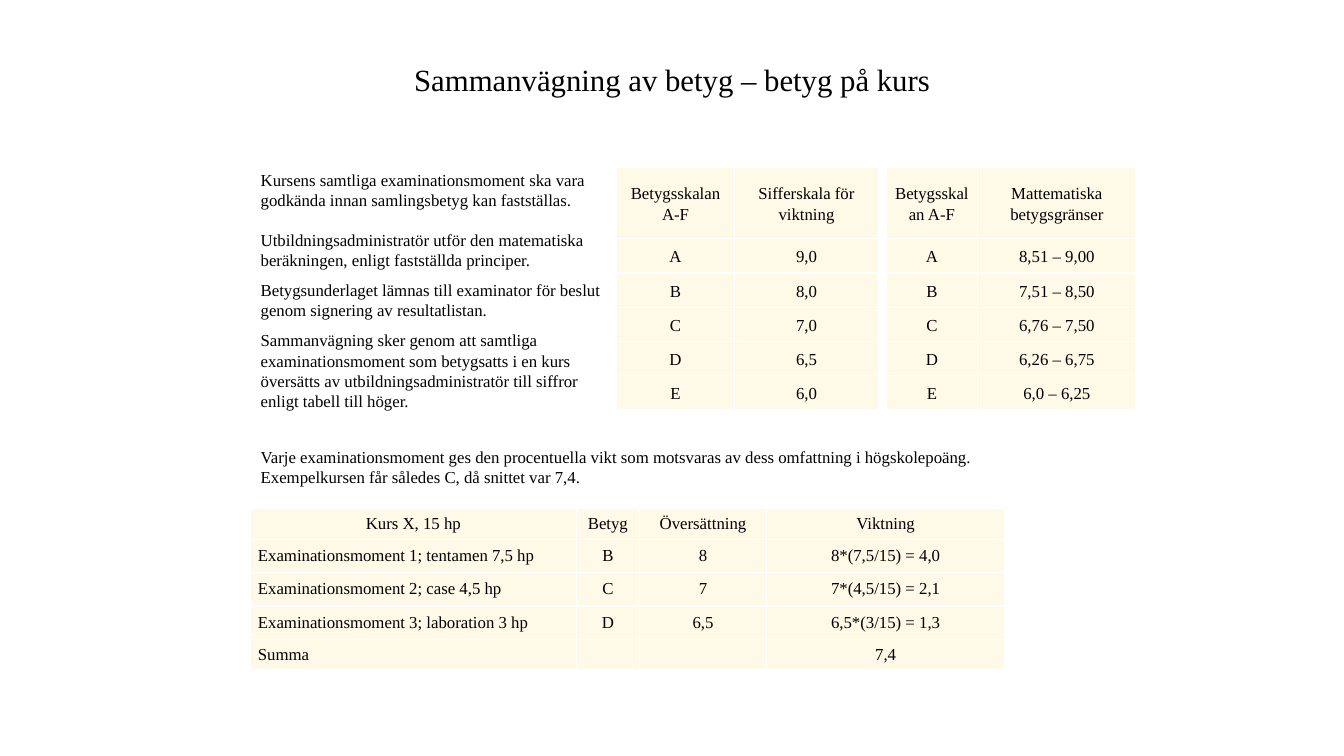
from lxml.etree import SubElement
from pptx import Presentation
from pptx.dml.color import RGBColor
from pptx.enum.text import MSO_ANCHOR, PP_ALIGN
from pptx.oxml.ns import qn
from pptx.util import Cm, Pt

COLOURS = {"text": "000000", "cell": "FFF9E7", "border": "FFFFFF"}
FONT = "Times New Roman"
LEFT, GRADES_TOP = 6.32, 4.22
GRADE_ROWS = [1.8] + [0.86] * 5

INTRO = [
    "Kursens samtliga examinationsmoment ska vara godkända innan samlingsbetyg kan fastställas.",
    "Utbildningsadministratör utför den matematiska beräkningen, enligt fastställda principer.",
    "Betygsunderlaget lämnas till examinator för beslut genom signering av resultatlistan.",
    "Sammanvägning sker genom att samtliga examinationsmoment som betygsatts i en kurs "
    "översätts av utbildningsadministratör till siffror enligt tabell till höger.",
]
INTRO_GAPS = [0, 14.4, 7, 7]
WEIGHTING = (
    "Varje examinationsmoment ges den procentuella vikt som motsvaras av dess omfattning "
    "i högskolepoäng. Exempelkursen får således C, då snittet var 7,4."
)
GRADE_VALUES = [
    ("Betygsskalan A-F", "Sifferskala för viktning"),
    ("A", "9,0"), ("B", "8,0"), ("C", "7,0"), ("D", "6,5"), ("E", "6,0"),
]
GRADE_LIMITS = [
    ("Betygsskalan A-F", "Mattematiska betygsgränser"),
    ("A", "8,51 – 9,00"), ("B", "7,51 – 8,50"), ("C", "6,76 – 7,50"),
    ("D", "6,26 – 6,75"), ("E", "6,0 – 6,25"),
]
COURSE_EXAMPLE = [
    ("Kurs X, 15 hp", "Betyg", "Översättning", "Viktning"),
    ("Examinationsmoment 1; tentamen 7,5 hp", "B", "8", "8*(7,5/15) = 4,0"),
    ("Examinationsmoment 2; case 4,5 hp", "C", "7", "7*(4,5/15) = 2,1"),
    ("Examinationsmoment 3; laboration 3 hp", "D", "6,5", "6,5*(3/15) = 1,3"),
    ("Summa", "", "", "7,4"),
]


def set_all(target, values):
    for name, value in values.items():
        setattr(target, name, value)


def write(paragraph, text, size=12, **layout):
    set_all(paragraph, layout)
    run = paragraph.add_run()
    run.text = text
    set_all(run.font, {"name": FONT, "size": Pt(size), "bold": False})
    run.font.color.rgb = RGBColor.from_string(COLOURS["text"])


def add_text(slide, box, texts, gaps=(0,), **style):
    frame = slide.shapes.add_textbox(*map(Cm, box)).text_frame
    set_all(frame, {"word_wrap": True, "vertical_anchor": MSO_ANCHOR.MIDDLE})
    for index, (text, gap) in enumerate(zip(texts, gaps)):
        paragraph = frame.add_paragraph() if index else frame.paragraphs[0]
        if index:
            paragraph.space_before = Pt(gap)
        write(paragraph, text, **style)


def add_borders(cell):
    properties = cell._tc.get_or_add_tcPr()
    for position, side in enumerate(("lnL", "lnR", "lnT", "lnB")):
        line = properties.makeelement(qn(f"a:{side}"), {"w": str(Pt(1))})
        properties.insert(position, line)
        fill = SubElement(line, qn("a:solidFill"))
        SubElement(fill, qn("a:srgbClr"), val=COLOURS["border"])


def format_cell(cell, text, **layout):
    set_all(cell, {
        "vertical_anchor": MSO_ANCHOR.MIDDLE,
        "margin_left": Cm(0.18), "margin_right": Cm(0.18),
        "margin_top": 0, "margin_bottom": 0,
    })
    cell.fill.solid()
    cell.fill.fore_color.rgb = RGBColor.from_string(COLOURS["cell"])
    add_borders(cell)
    write(cell.text_frame.paragraphs[0], text, space_after=Pt(3), **layout)


def add_grid(slide, left, top, widths, heights, rows, spacing=1.0, left_labels=False):
    table = slide.shapes.add_table(
        len(rows), len(widths), Cm(left), Cm(top), Cm(sum(widths)), Cm(sum(heights))
    ).table
    set_all(table, {"first_row": False, "horz_banding": False})
    for column, width in zip(table.columns, widths):
        column.width = Cm(width)
    for row_index, (values, height) in enumerate(zip(rows, heights)):
        table.rows[row_index].height = Cm(height)
        for column_index, value in enumerate(values):
            is_label = left_labels and row_index and not column_index
            format_cell(
                table.cell(row_index, column_index), value, line_spacing=spacing,
                alignment=PP_ALIGN.LEFT if is_label else PP_ALIGN.CENTER,
            )


def main():
    presentation = Presentation()
    set_all(presentation, {"slide_width": Cm(33.87), "slide_height": Cm(19.05)})
    slide = presentation.slides.add_slide(presentation.slide_layouts[6])

    # Title
    add_text(slide, (0, 1.42, 33.87, 1.27), ["Sammanvägning av betyg – betyg på kurs"],
             size=22, alignment=PP_ALIGN.CENTER, line_spacing=0.9)

    # Grade scales
    add_grid(slide, 15.54, GRADES_TOP, [2.97, 3.63], GRADE_ROWS, GRADE_VALUES, 1.15)
    add_grid(slide, 22.33, GRADES_TOP, [2.31, 3.99], GRADE_ROWS, GRADE_LIMITS, 1.15)

    # Explanations
    add_text(slide, (LEFT, 4.11, 9.19, 6.4), INTRO, INTRO_GAPS)
    add_text(slide, (LEFT, 11.13, 19, 1.27), [WEIGHTING])

    # Worked example
    add_grid(slide, LEFT, 12.8, [8.2, 1.6, 3.2, 6], [0.79, 0.84, 0.84, 0.84, 0.41],
             COURSE_EXAMPLE, left_labels=True)

    presentation.save("out.pptx")


if __name__ == "__main__":
    main()
